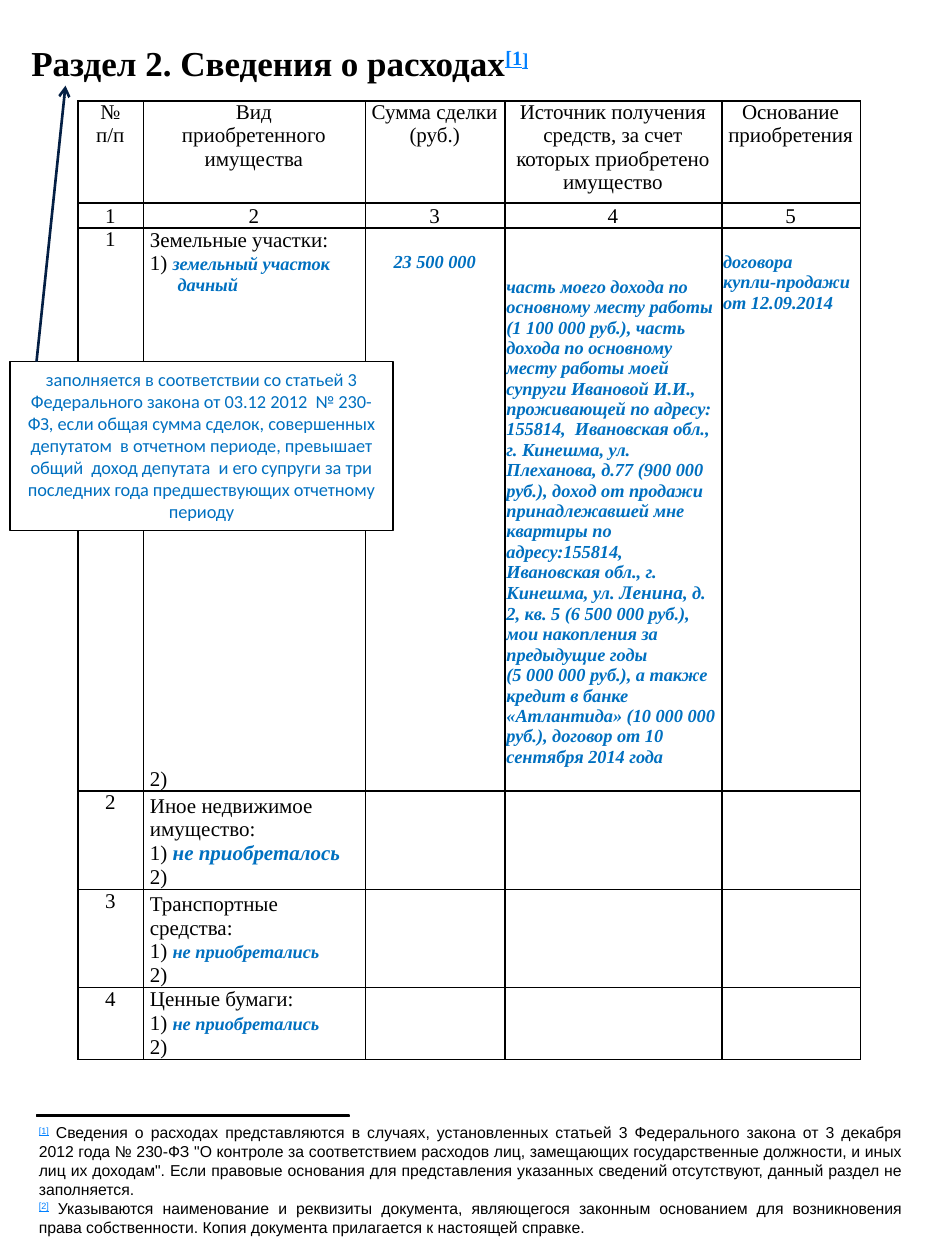
from dataclasses import dataclass
from lxml.etree import SubElement
from pptx import Presentation
from pptx.dml.color import RGBColor
from pptx.enum.shapes import MSO_CONNECTOR, MSO_SHAPE
from pptx.enum.text import MSO_ANCHOR, PP_ALIGN
from pptx.oxml.ns import qn
from pptx.util import Inches, Pt


@dataclass(frozen=True)
class Theme:
    black: str = "000000"
    white: str = "FFFFFF"
    answer: str = "0070C0"
    reference: str = "0080FF"
    arrow: str = "041F44"
    serif: str = "Times New Roman"
    sans: str = "Arial"
    callout: str = "Calibri"
    title_size: float = 20
    bracket_size: float = 18
    form_size: float = 12
    name_size: float = 11
    answer_size: float = 10.5
    note_size: float = 9


def amount(value):
    """Group digits by threes with no-break spaces."""
    return f"{value:,}".replace(",", chr(160))


THEME = Theme()
CENTER, JUSTIFY, LEFT = PP_ALIGN.CENTER, PP_ALIGN.JUSTIFY, PP_ALIGN.LEFT
TOP, BOTTOM, MIDDLE = MSO_ANCHOR.TOP, MSO_ANCHOR.BOTTOM, MSO_ANCHOR.MIDDLE

COLUMNS = [0.52, 1.76, 1.11, 1.72, 1.1]
HEADINGS = [
    ["№\nп/п"],
    ["Вид", "приобретенного имущества"],
    ["Сумма сделки", "(руб.)"],
    ["Источник получения средств, за счет которых приобретено имущество"],
    ["Основание приобретения"],
]
# Kind of property, answer, size of the answer, heights of the three rows
PROPERTY = [
    ("Земельные участки:", "земельный участок", THEME.answer_size, [0.19, 4.09, 0.19]),
    ("Иное недвижимое имущество:", "не приобреталось", THEME.form_size, [0.4, 0.19, 0.19]),
    ("Транспортные средства:", "не приобретались", THEME.answer_size, [0.4, 0.19, 0.19]),
    ("Ценные бумаги:", "не приобретались", THEME.answer_size, [0.19, 0.19, 0.19]),
]
HEADER_HEIGHTS = [0.81, 0.2]
SOURCE_START = (
    f"часть моего дохода по основному месту работы ({amount(1100000)} руб.), часть дохода "
    "по основному месту работы моей супруги Ивановой И.И., проживающей по адресу: "
    f"155814,  Ивановская обл., г. Кинешма, ул. Плеханова, д.77 ({amount(900000)} руб.), доход "
    "от продажи принадлежавшей мне квартиры по адресу:155814, Ивановская обл., "
    "г. Кинешма, ул. "
)
SOURCE_END = (
    f", д. 2, кв. 5 ({amount(6500000)} руб.), мои накопления за предыдущие годы "
    f"({amount(5000000)} руб.), а также кредит в банке «Атлантида» ({amount(10000000)} руб.), "
    "договор от 10 сентября 2014 года"
)
FOOTNOTES = [
    "Сведения о расходах представляются в случаях, установленных статьей 3 Федерального "
    "закона от 3 декабря 2012 года № 230-ФЗ \"О контроле за соответствием расходов лиц, "
    "замещающих государственные должности, и иных лиц их доходам\". Если правовые основания "
    "для представления указанных сведений отсутствуют, данный раздел не заполняется.",
    "Указываются наименование и реквизиты документа, являющегося законным основанием для "
    "возникновения права собственности. Копия документа прилагается к настоящей справке.",
]
CALLOUT = (
    "заполняется в соответствии со статьей 3 Федерального закона от 03.12 2012  № 230-ФЗ, "
    "если общая сумма сделок, совершенных депутатом  в отчетном периоде, превышает общий  "
    "доход депутата  и его супруги за три последних года предшествующих отчетному периоду"
)


def color(value):
    return RGBColor.from_string(value)


def add_text(paragraph, text, *, size=THEME.form_size, font=THEME.serif, ink=THEME.black,
             bold=False, italic=False, reference=False):
    """Append formatted text; a reference is a raised, underlined mark."""
    for number, line in enumerate(text.split("\n")):
        if number:
            paragraph.add_line_break()
        run = paragraph.add_run()
        run.text = line
        run.font.size, run.font.name = Pt(size), font
        run.font.bold, run.font.italic = bold, italic
        run.font.color.rgb = color(THEME.reference if reference else ink)
        if reference:
            run.font.underline = True
            run.font._element.set("baseline", "30000")


def add_answer(paragraph, text, size=THEME.answer_size):
    add_text(paragraph, text, size=size, ink=THEME.answer, bold=True, italic=True)


def add_paragraph(frame, align=LEFT, indent=0):
    first = frame.paragraphs[0]
    paragraph = frame.add_paragraph() if first.runs else first
    paragraph.alignment = align
    if indent:
        properties = paragraph._p.get_or_add_pPr()
        properties.set("marL", str(Inches(indent)))
        properties.set("indent", "0")
    return paragraph


def add_text_frame(slide, left, top, width, height, anchor):
    box = slide.shapes.add_textbox(Inches(left), Inches(top), Inches(width), Inches(height))
    box.text_frame.word_wrap = True
    box.text_frame.vertical_anchor = anchor
    return box.text_frame


def add_box(slide, left, top, width, height, fill):
    box = slide.shapes.add_shape(MSO_SHAPE.RECTANGLE, Inches(left), Inches(top),
                                 Inches(width), Inches(height))
    box.shadow.inherit = False
    box.fill.solid()
    box.fill.fore_color.rgb = color(fill)
    box.line.color.rgb = color(THEME.black)
    box.line.width = Pt(0.75)
    return box


def add_arrow(slide, start, end):
    arrow = slide.shapes.add_connector(MSO_CONNECTOR.STRAIGHT, *map(Inches, start + end))
    arrow.line.color.rgb = color(THEME.arrow)
    arrow.line.width = Pt(1.5)
    SubElement(arrow.line._get_or_add_ln(), qn("a:tailEnd"), type="arrow")
    SubElement(arrow._element.spPr, qn("a:effectLst"))


def format_cell(cell, top_border, bottom_border):
    cell.margin_left, cell.margin_right = Inches(0.01), Inches(0.02)
    cell.margin_top = cell.margin_bottom = 0
    properties = cell._tc.get_or_add_tcPr()
    for side, shown in (("L", True), ("R", True), ("T", top_border), ("B", bottom_border)):
        border = SubElement(properties, qn(f"a:ln{side}"), w=str(Pt(1)))
        if shown:
            SubElement(SubElement(border, qn("a:solidFill")), qn("a:srgbClr"), val=THEME.black)
        else:
            SubElement(border, qn("a:noFill"))
    cell.fill.background()


def add_form(slide):
    heights = HEADER_HEIGHTS + [height for kind in PROPERTY for height in kind[3]]
    form = slide.shapes.add_table(len(heights), len(COLUMNS), Inches(0.62), Inches(0.8),
                                  Inches(sum(COLUMNS)), Inches(sum(heights))).table
    form.first_row = form.horz_banding = False
    for column, width in zip(form.columns, COLUMNS):
        column.width = Inches(width)
    for number, height in enumerate(heights):
        form.rows[number].height = Inches(height)
        header, step = number < 2, (number - 2) % 3
        for cell in form.rows[number].cells:
            format_cell(cell, header or step == 0, header or step == 2)

    def write(row, column, align=LEFT, indent=0, anchor=BOTTOM):
        cell = form.cell(row, column)
        cell.vertical_anchor = anchor
        return add_paragraph(cell.text_frame, align, indent)

    # Headings and column numbers
    for column, lines in enumerate(HEADINGS):
        for line in lines:
            add_text(write(0, column, CENTER, anchor=TOP), line)
        add_text(write(1, column, CENTER), str(column + 1))

    # Three rows for each kind of property
    for number, (kind, answer, size, _) in enumerate(PROPERTY):
        row = 2 + 3 * number
        add_text(write(row, 0, CENTER, anchor=TOP), str(number + 1))
        add_text(write(row, 1, indent=0.04), kind)
        item = write(row + 1, 1, indent=0.04, anchor=TOP)
        add_text(item, "1) ")
        add_answer(item, answer, size)
        add_text(write(row + 2, 1, indent=0.04), "2)")

    # Details of the land purchase
    add_answer(write(3, 1, indent=0.26, anchor=TOP), "дачный")
    add_answer(write(3, 2, CENTER, anchor=TOP), amount(23500000))
    source = write(3, 3)
    add_answer(source, SOURCE_START)
    add_answer(source, "Ленина", THEME.name_size)
    add_answer(source, SOURCE_END)
    for line in ("договора", "купли-продажи", "от 12.09.2014"):
        add_answer(write(3, 4, anchor=TOP), line)

    # Keep empty cells as low as their rows
    for cell in form.iter_cells():
        if not cell.text_frame.text:
            SubElement(cell.text_frame.paragraphs[0]._p, qn("a:endParaRPr"),
                       sz=str(int(THEME.answer_size * 100)))


def main():
    presentation = Presentation()
    presentation.slide_width, presentation.slide_height = Inches(7.5), Inches(10)
    slide = presentation.slides.add_slide(presentation.slide_layouts[6])

    add_form(slide)

    # Title
    title = add_paragraph(add_text_frame(slide, 0.15, 0.01, 6.67, 0.7, BOTTOM))
    add_text(title, "Раздел 2. Сведения о расходах", size=THEME.title_size, bold=True)
    add_text(title, "[1", size=THEME.title_size, bold=True, reference=True)
    add_text(title, "]", size=THEME.bracket_size, bold=True, reference=True)

    # Footnotes under their rule
    add_box(slide, 0.29, 8.85, 2.48, 0.01, THEME.black)
    footnotes = add_text_frame(slide, 0.21, 8.86, 7.04, 1.01, MIDDLE)
    for number, note in enumerate(FOOTNOTES, 1):
        paragraph = add_paragraph(footnotes, JUSTIFY)
        add_text(paragraph, f"[{number}]", size=THEME.note_size, font=THEME.sans, reference=True)
        add_text(paragraph, " " + note, size=THEME.note_size, font=THEME.sans)

    # Callout pointing at the title
    callout = add_box(slide, 0.08, 2.87, 3.04, 1.34, THEME.white).text_frame
    callout.word_wrap = True
    callout.vertical_anchor = TOP
    advice = add_paragraph(callout, CENTER)
    advice.space_after = Pt(10)
    add_text(advice, CALLOUT, size=THEME.answer_size, font=THEME.callout, ink=THEME.answer)
    add_arrow(slide, (0.29, 2.87), (0.52, 0.68))

    presentation.save("out.pptx")


if __name__ == "__main__":
    main()
